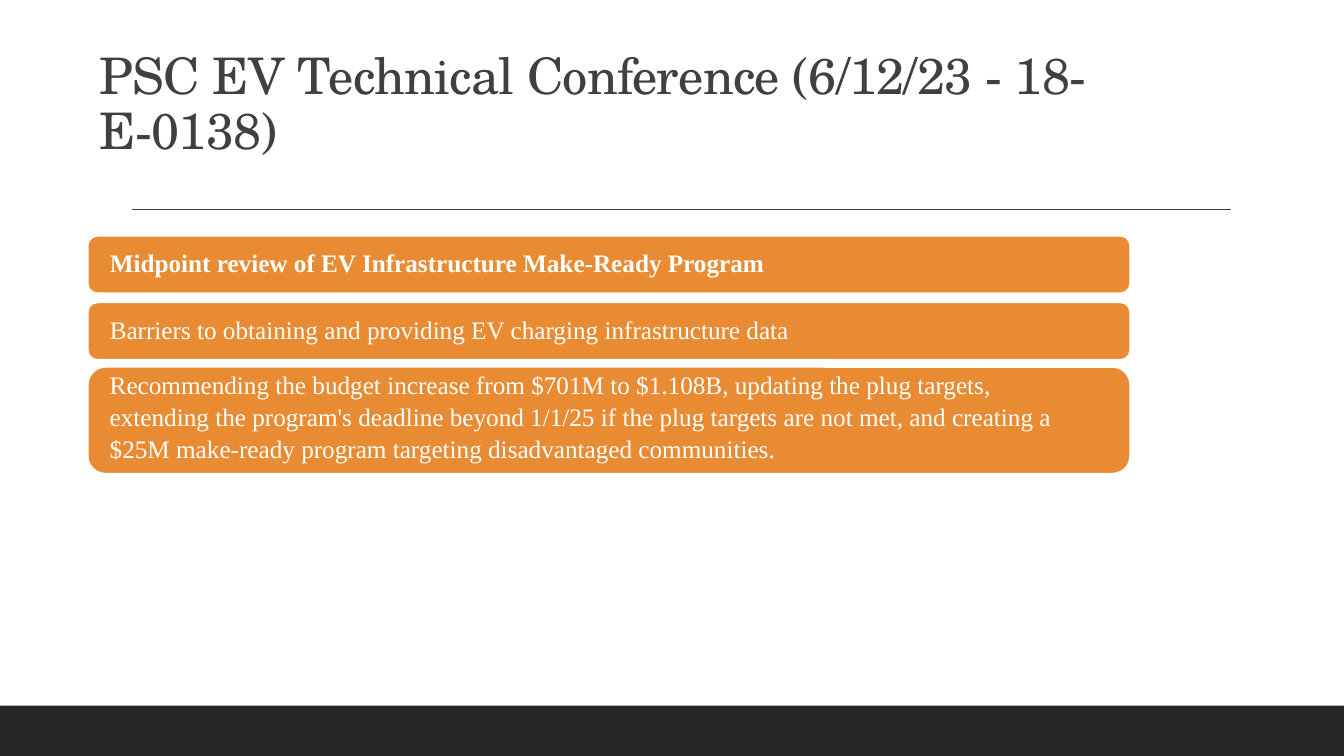
import pptx
import pptx.dml.color
import pptx.enum.shapes
import pptx.enum.text
import pptx.oxml
import pptx.util

PX = 9144
SHAPES = pptx.enum.shapes.MSO_SHAPE
ANCHORS = pptx.enum.text.MSO_ANCHOR


def color(hex_code):
    """Return the colour for a hex string."""
    return pptx.dml.color.RGBColor.from_string(hex_code)


def write(frame, text, *, font, size, ink, bold=False, spacing=1.0, tracking=0,
          anchor=ANCHORS.MIDDLE, insets=(10, 5, 10, 5)):
    """Fill a text frame with one left-aligned paragraph."""
    frame.word_wrap = True
    frame.vertical_anchor = anchor
    (frame.margin_left, frame.margin_top,
     frame.margin_right, frame.margin_bottom) = [round(px * PX) for px in insets]
    paragraph = frame.paragraphs[0]
    paragraph.alignment = pptx.enum.text.PP_ALIGN.LEFT
    paragraph.line_spacing = spacing
    run = paragraph.add_run()
    run.text = text
    run.font.name = font
    run.font.size = pptx.util.Pt(size)
    run.font.bold = bold
    run.font.color.rgb = color(ink)
    if tracking:
        run.font._element.set("spc", str(tracking))


class ConferenceSlide:
    """Holds the style and the current slide."""

    TITLE_FONT = "TeX Gyre Schola"
    BODY_FONT = "Times New Roman"
    DARK, GRAY, ORANGE, WHITE = "262626", "404040", "E88B33", "FFFFFF"
    CORNER_INSET = 0.05

    def __init__(self, presentation):
        """Add a blank slide."""
        self.shapes = presentation.slides.add_slide(presentation.slide_layouts[6]).shapes

    def block(self, kind, left, top, width, height, fill, outline=None):
        """Add a filled preset shape."""
        block = self.shapes.add_shape(kind, left * PX, top * PX, width * PX, height * PX)
        block.shadow.inherit = False
        block.fill.solid()
        block.fill.fore_color.rgb = color(fill)
        if outline:
            block.line.color.rgb = color(outline)
            block.line.width = pptx.util.Pt(1.25)
        else:
            block.line.fill.background()
        return block

    def rule(self, left, right, top):
        """Add a thin horizontal line."""
        rule = self.shapes.add_connector(pptx.enum.shapes.MSO_CONNECTOR.STRAIGHT,
                                         left * PX, top * PX, right * PX, top * PX)
        rule.line.color.rgb = color(self.GRAY)
        rule.line.width = pptx.util.Pt(1)
        effects = pptx.oxml.parse_xml(
            '<a:effectLst xmlns:a="http://schemas.openxmlformats.org/drawingml/2006/main"/>')
        rule._element.spPr.append(effects)

    def title(self, text, left, top, width, height):
        """Add the slide title."""
        title = self.shapes.add_textbox(left * PX, top * PX, width * PX, height * PX)
        write(title.text_frame, text, font=self.TITLE_FONT, size=36, ink=self.GRAY,
              spacing=0.9, tracking=-50, anchor=ANCHORS.BOTTOM)

    def topic(self, text, top, height, bold=False):
        """Add a rounded bar that carries one topic."""
        bar = self.block(SHAPES.ROUNDED_RECTANGLE, 87, top, 1034, height,
                         self.ORANGE, self.WHITE)
        corner = self.CORNER_INSET * height
        write(bar.text_frame, text, font=self.BODY_FONT, size=18, ink=self.WHITE,
              bold=bold, spacing=1.05, insets=(22 - corner, 0, 48 - corner, height * 0.09))


def main():
    """Build and save the slide."""
    presentation = pptx.Presentation()
    presentation.slide_width = 1333 * PX
    presentation.slide_height = 750 * PX
    slide = ConferenceSlide(presentation)
    slide.block(SHAPES.RECTANGLE, 0, 700, 1333, 50, slide.DARK)
    slide.rule(131, 1221, 208)
    slide.title("PSC EV Technical Conference (6/12/23 - 18-E-0138)", 89, 80, 1160, 84)
    slide.topic("Midpoint review of EV Infrastructure Make-Ready Program", 234, 57, bold=True)
    slide.topic("Barriers to obtaining and providing EV charging infrastructure data", 300, 57)
    slide.topic("Recommending the budget increase from $701M to $1.108B, updating the plug "
                "targets, extending the program's deadline beyond 1/1/25 if the plug targets "
                "are not met, and creating a $25M make-ready program targeting disadvantaged "
                "communities.", 364, 106)
    presentation.save("out.pptx")


if __name__ == "__main__":
    main()
